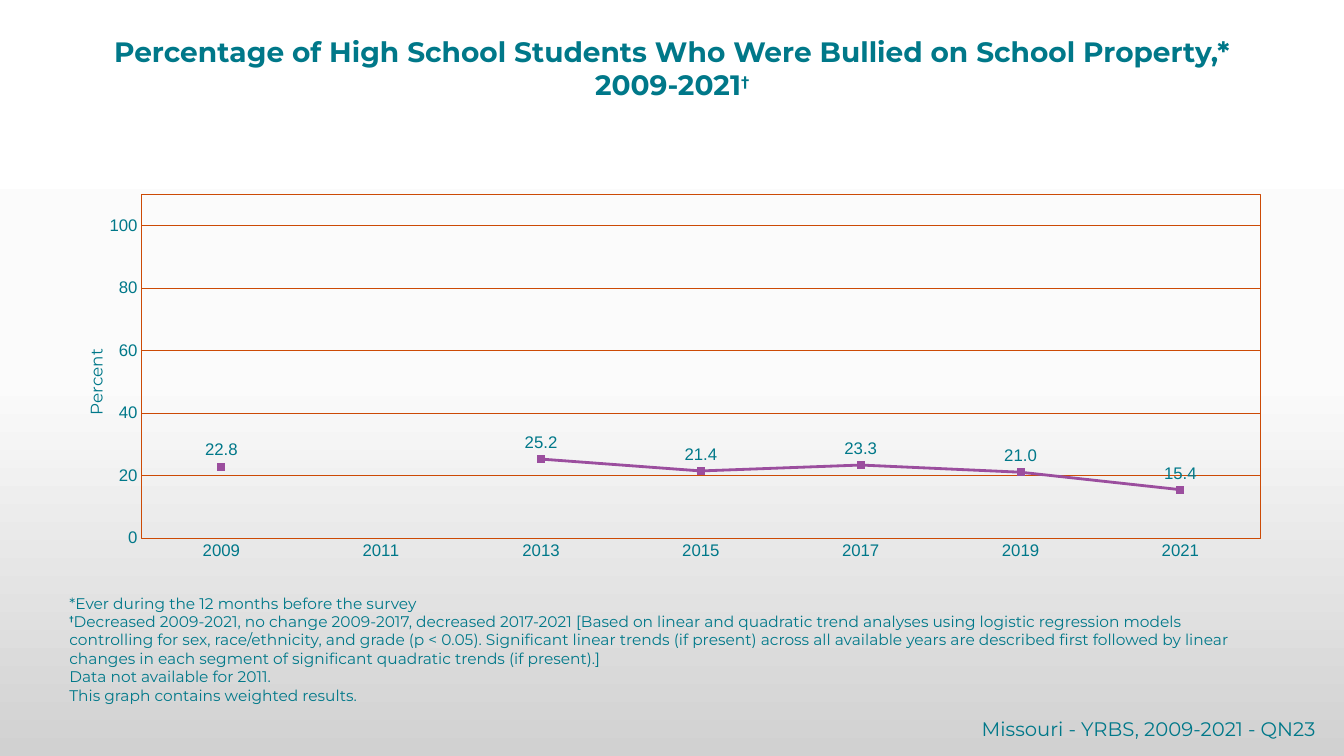
from dataclasses import dataclass
from typing import Any, Optional

import lxml.etree
import pptx
import pptx.chart.data
import pptx.dml.color
import pptx.enum.chart
import pptx.enum.text
import pptx.oxml
import pptx.oxml.ns
import pptx.util

Cm, Pt = pptx.util.Cm, pptx.util.Pt
qn = pptx.oxml.ns.qn
ALIGN = pptx.enum.text.PP_ALIGN
ANCHOR = pptx.enum.text.MSO_ANCHOR


@dataclass(frozen=True)
class Theme:
    text: str = "007889"
    rule: str = "CC4A05"
    line: str = "9B4E9E"
    background: tuple = ((0, "FFFFFF"), (50, "FBFBFB"), (100, "D1D1D1"))
    font: str = "Montserrat"
    number_font: str = "Arial"
    title: int = 20
    title_mark: int = 17
    note: int = 11
    note_mark: int = 9
    chart: int = 12
    source: int = 14


THEME = Theme()


@dataclass(frozen=True)
class Span:
    text: str
    size: int
    bold: bool = False
    raised: int = 0  # superscript, percent


@dataclass(frozen=True)
class TextBlock:
    box: tuple  # left, top, width, height in cm
    paragraphs: list
    align: Optional[Any] = None
    anchor: Any = ANCHOR.TOP


def note(text: str) -> Span:
    return Span(text, THEME.note)


TITLE = TextBlock((2.12, 0.74, 29.64, 1.96), [[
    Span("Percentage of High School Students Who Were Bullied on School Property,* "
         "2009-2021", THEME.title, True),
    Span("†", THEME.title_mark, True, 40)]], ALIGN.CENTER)
NOTES = TextBlock((1.5, 14.86, 30.05, 3.02), [
    [note("*Ever during the 12 months before the survey")],
    [Span("†", THEME.note_mark, True, 50),
     note("Decreased 2009-2021, no change 2009-2017, decreased 2017-2021 [Based on linear "
          "and quadratic trend analyses using logistic regression models controlling for "
          "sex, race/ethnicity, and grade (p < 0.05). Significant linear trends (if present) "
          "across all available years are described first followed by linear changes in each "
          "segment of significant quadratic trends (if present).]")],
    [note("Data not available for 2011.")],
    [note("This graph contains weighted results.")]], anchor=ANCHOR.BOTTOM)
SOURCE = TextBlock((9.53, 17.93, 23.88, 0.86), [[
    Span("Missouri - YRBS, 2009-2021 - QN23", THEME.source)]], ALIGN.RIGHT)

BULLIED = {"2009": 22.8, "2011": None, "2013": 25.2, "2015": 21.4,
           "2017": 23.3, "2019": 21.0, "2021": 15.4}


def rgb(color: str) -> Any:
    return pptx.dml.color.RGBColor.from_string(color)


def style_font(font: Any, size: int, name: str, bold: bool = False) -> None:
    font.size, font.name, font.bold = Pt(size), name, bold
    font.color.rgb = rgb(THEME.text)


def style_line(line: Any, color: str, width: float) -> None:
    line.color.rgb = rgb(color)
    line.width = Pt(width)


def set_background(s: Any) -> None:
    fill = s.background.fill
    fill.gradient()
    grad = s._element.find(".//" + qn("a:gradFill"))
    stops = grad.find(qn("a:gsLst"))
    for stop in list(stops):
        stops.remove(stop)
    for position, color in THEME.background:
        stop = lxml.etree.SubElement(stops, qn("a:gs"), pos=str(position * 1000))
        lxml.etree.SubElement(stop, qn("a:srgbClr"), val=color)
    fill.gradient_angle = 270  # counter-clockwise: top to bottom


def add_text(s: Any, block: TextBlock) -> None:
    tf = s.shapes.add_textbox(*map(Cm, block.box)).text_frame
    tf.word_wrap = True
    tf.vertical_anchor = block.anchor
    for i, spans in enumerate(block.paragraphs):
        p = tf.add_paragraph() if i else tf.paragraphs[0]
        p.alignment = block.align
        for span in spans:
            r = p.add_run()
            r.text = span.text
            style_font(r.font, span.size, THEME.font, span.bold)
            if span.raised:
                r._r.get_or_add_rPr().set("baseline", str(span.raised * 1000))


def set_layout(parent: Any, **values: Any) -> None:
    """Place a chart part by fractions of the chart area."""
    layout = parent.find(qn("c:layout"))
    if layout is None:
        layout = parent.makeelement(qn("c:layout"), {})
        parent.insert(0, layout)
    manual = lxml.etree.SubElement(layout, qn("c:manualLayout"))
    for key, value in values.items():
        lxml.etree.SubElement(manual, qn("c:" + key), val=str(value))


def add_line_chart(s: Any) -> None:
    data = pptx.chart.data.CategoryChartData(number_format="0.0")
    data.categories = list(BULLIED)
    data.add_series("Series 1", list(BULLIED.values()))
    chart = s.shapes.add_chart(pptx.enum.chart.XL_CHART_TYPE.LINE_MARKERS,
                               *map(Cm, (1.45, 4.5, 30.68, 10.54)), data).chart
    chart.has_legend = chart.has_title = False
    style_font(chart.font, THEME.chart, THEME.number_font)
    chart.plots[0].vary_by_categories = False

    # Axes and grid
    for axis in (chart.category_axis, chart.value_axis):
        axis.major_tick_mark = axis.minor_tick_mark = pptx.enum.chart.XL_TICK_MARK.NONE
        style_font(axis.tick_labels.font, THEME.chart, THEME.number_font)
        style_line(axis.format.line, THEME.rule, 0.25)
    percent = chart.value_axis
    percent.minimum_scale, percent.maximum_scale, percent.major_unit = 0, 110, 20
    percent.tick_labels.number_format = "#,##0"
    percent.tick_labels.number_format_is_linked = False
    percent.has_major_gridlines = True
    style_line(percent.major_gridlines.format.line, THEME.rule, 0.25)

    # Axis title
    tf = percent.axis_title.text_frame
    tf.text = "Percent"
    style_font(tf.paragraphs[0].runs[0].font, THEME.chart, THEME.font)
    body = tf._txBody.find(qn("a:bodyPr"))
    body.set("rot", "-5400000")
    body.set("vert", "horz")
    set_layout(percent.axis_title._element, xMode="edge", yMode="edge", x=0.02, y=0.4)

    # Plot area with a thin frame
    area = chart._chartSpace.find(".//" + qn("c:plotArea"))
    set_layout(area, layoutTarget="inner", xMode="edge", yMode="edge",
               x=0.069, y=0.038, w=0.919, h=0.821)
    area.append(pptx.oxml.parse_xml(
        f'<c:spPr {pptx.oxml.ns.nsdecls("c", "a")}><a:noFill/><a:ln w="3175"><a:solidFill>'
        f'<a:srgbClr val="{THEME.rule}"/></a:solidFill></a:ln></c:spPr>'))

    # Series, markers and value labels
    series = chart.plots[0].series[0]
    series.smooth = False
    style_line(series.format.line, THEME.line, 2)
    marker = series.marker
    marker.style, marker.size = pptx.enum.chart.XL_MARKER_STYLE.SQUARE, 5
    marker.format.fill.solid()
    marker.format.fill.fore_color.rgb = rgb(THEME.line)
    marker.format.line.color.rgb = rgb(THEME.line)
    labels = series.data_labels
    labels.show_value = True
    labels.position = pptx.enum.chart.XL_LABEL_POSITION.ABOVE
    labels.number_format, labels.number_format_is_linked = "#,##0.0", False
    style_font(labels.font, THEME.chart, THEME.number_font)


def main() -> None:
    prs = pptx.Presentation()
    prs.slide_width, prs.slide_height = Cm(33.87), Cm(19.05)
    s = prs.slides.add_slide(prs.slide_layouts[6])
    set_background(s)
    add_text(s, TITLE)
    add_text(s, NOTES)
    add_line_chart(s)
    add_text(s, SOURCE)
    prs.save("out.pptx")


if __name__ == "__main__":
    main()
